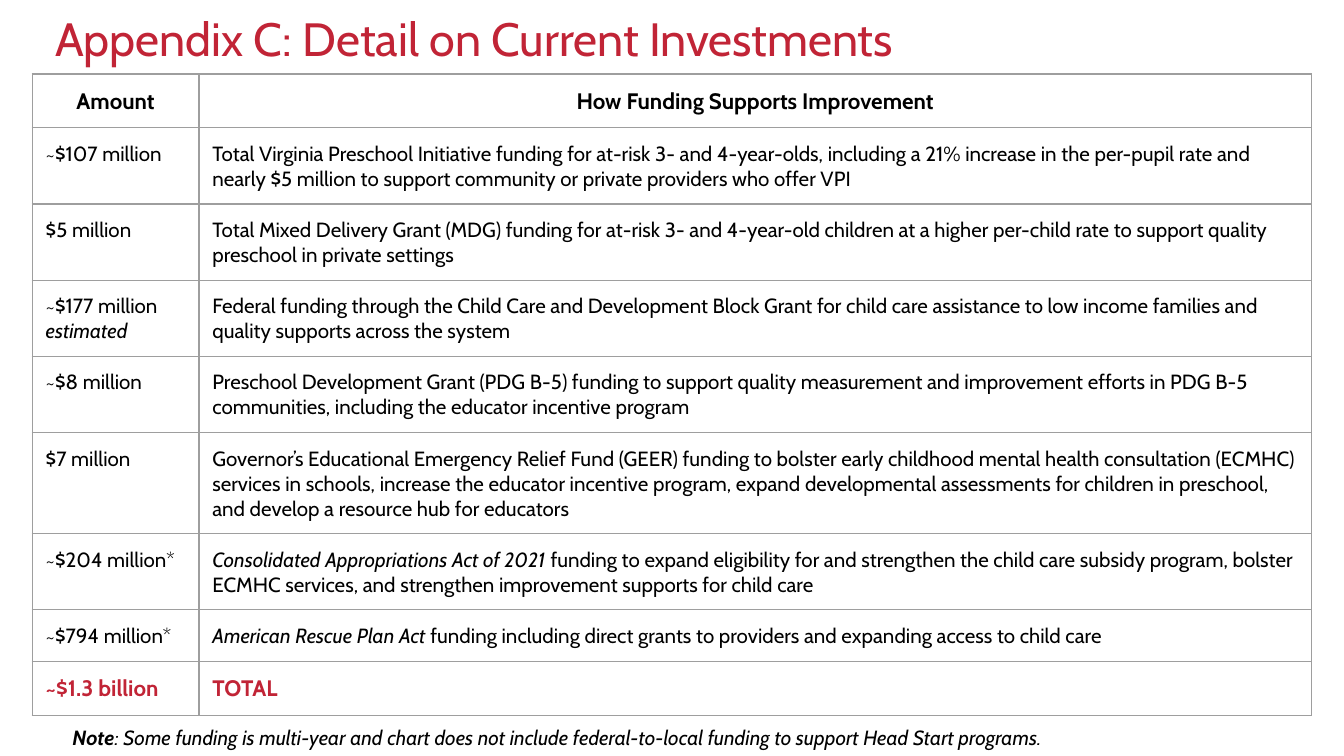
from lxml import etree
from pptx import Presentation
from pptx import util as u
from pptx.dml.color import RGBColor
from pptx.enum import text
from pptx.oxml.ns import qn

# Content: underscores enclose italics, a line break starts a paragraph
TITLE = "Appendix C: Detail on Current Investments"
HEAD = ("Amount", "How Funding Supports Improvement")
ITEMS = [
    ("~$107 million", "Total Virginia Preschool Initiative funding for at-risk 3- and 4-year-olds, including a 21% increase in the per-pupil rate and nearly $5 million to support community or private providers who offer VPI"),
    ("$5 million", "Total Mixed Delivery Grant (MDG) funding for at-risk 3- and 4-year-old children at a higher per-child rate to support quality preschool in private settings"),
    ("~$177 million\n_estimated_", "Federal funding through the Child Care and Development Block Grant for child care assistance to low income families and quality supports across the system"),
    ("~$8 million", "Preschool Development Grant (PDG B-5) funding to support quality measurement and improvement efforts in PDG B-5 communities, including the educator incentive program"),
    ("$7 million", "Governor’s Educational Emergency Relief Fund (GEER) funding to bolster early childhood mental health consultation (ECMHC) services in schools, increase the educator incentive program, expand developmental assessments for children in preschool, and develop a resource hub for educators"),
    ("~$204 million*", "_Consolidated Appropriations Act of 2021 _funding to expand eligibility for and strengthen the child care subsidy program, bolster ECMHC services, and strengthen improvement supports for child care"),
    ("~$794 million*", "_American Rescue Plan Act _funding including direct grants to providers and expanding access to child care"),
]
TOTAL = ("~$1.3 billion", "TOTAL")
NOTE = ("Note", ": Some funding is multi-year and chart does not include federal-to-local funding to support Head Start programs.")

# Format
RED, BLACK, GREY = "C12436", "000000", "9E9E9E"
COLS = (1.24, 8.28)
ROWS = (0.38, 0.54, 0.54, 0.54, 0.54, 0.72, 0.54, 0.37, 0.39)
BODY = dict(size=11)
BOLD = dict(size=12, bold=True)
SUM = dict(BOLD, color=RED)


def rgb(code):
    return RGBColor.from_string(code)


def add_run(para, words, size, color=BLACK, bold=False, italic=False):
    run = para.add_run()
    run.text = words
    form = dict(name="Cabin", size=u.Pt(size), bold=bold, italic=italic)
    for key, val in form.items():
        setattr(run.font, key, val)
    run.font.color.rgb = rgb(color)


def set_pad(part, x, y):
    for side, pad in dict(left=x, right=x, top=y, bottom=y).items():
        setattr(part, "margin_" + side, u.Inches(pad))


def add_box(place, x, y):
    frame = slide.shapes.add_textbox(*map(u.Inches, place)).text_frame
    frame.word_wrap = True
    set_pad(frame, x, y)
    return frame


def draw_edges(cell):
    props = cell._tc.get_or_add_tcPr()
    for num, tag in enumerate(("a:lnL", "a:lnR", "a:lnT", "a:lnB")):
        line = etree.Element(qn(tag), w=str(u.Pt(0.75)))
        fill = etree.SubElement(line, qn("a:solidFill"))
        etree.SubElement(fill, qn("a:srgbClr"), val=GREY)
        props.insert(num, line)


def fill_cell(cell, words, form, align):
    cell.fill.background()
    set_pad(cell, 0.1, 0.1)
    draw_edges(cell)
    frame = cell.text_frame
    for num, line in enumerate(words.split("\n")):
        para = frame.add_paragraph() if num else frame.paragraphs[0]
        para.alignment = align
        para.line_spacing = 1.0
        for odd, piece in enumerate(line.split("_")):
            if piece:
                add_run(para, piece, italic=odd % 2 == 1, **form)


# Slide in 16:9
deck = Presentation()
deck.slide_width = u.Inches(10)
deck.slide_height = deck.slide_width * 9 // 16
slide = deck.slides.add_slide(deck.slide_layouts[6])

# Title
frame = add_box((0.34, -0.01, 9.32, 0.63), 0.07, 0.04)
frame.vertical_anchor = text.MSO_ANCHOR.MIDDLE
frame.paragraphs[0].line_spacing = 0.9
add_run(frame.paragraphs[0], TITLE, 25, RED)

# Funding table
rows = [(HEAD, BOLD), *((item, BODY) for item in ITEMS), (TOTAL, SUM)]
area = map(u.Inches, (0.24, 0.55, sum(COLS), sum(ROWS)))
table = slide.shapes.add_table(len(rows), len(COLS), *area).table
table.first_row = table.horz_banding = False
for col, width in zip(table.columns, COLS):
    col.width = u.Inches(width)
for row, height, (words, form) in zip(table.rows, ROWS, rows):
    row.height = u.Inches(height)
    align = text.PP_ALIGN.CENTER if words is HEAD else text.PP_ALIGN.LEFT
    for cell, item in zip(row.cells, words):
        fill_cell(cell, item, form, align)

# Footnote
frame = add_box((0.44, 5.3, 9.32, 0.39), 0.1, 0.1)
for words, bold in zip(NOTE, (True, False)):
    add_run(frame.paragraphs[0], words, 11, bold=bold, italic=True)

deck.save("out.pptx")
